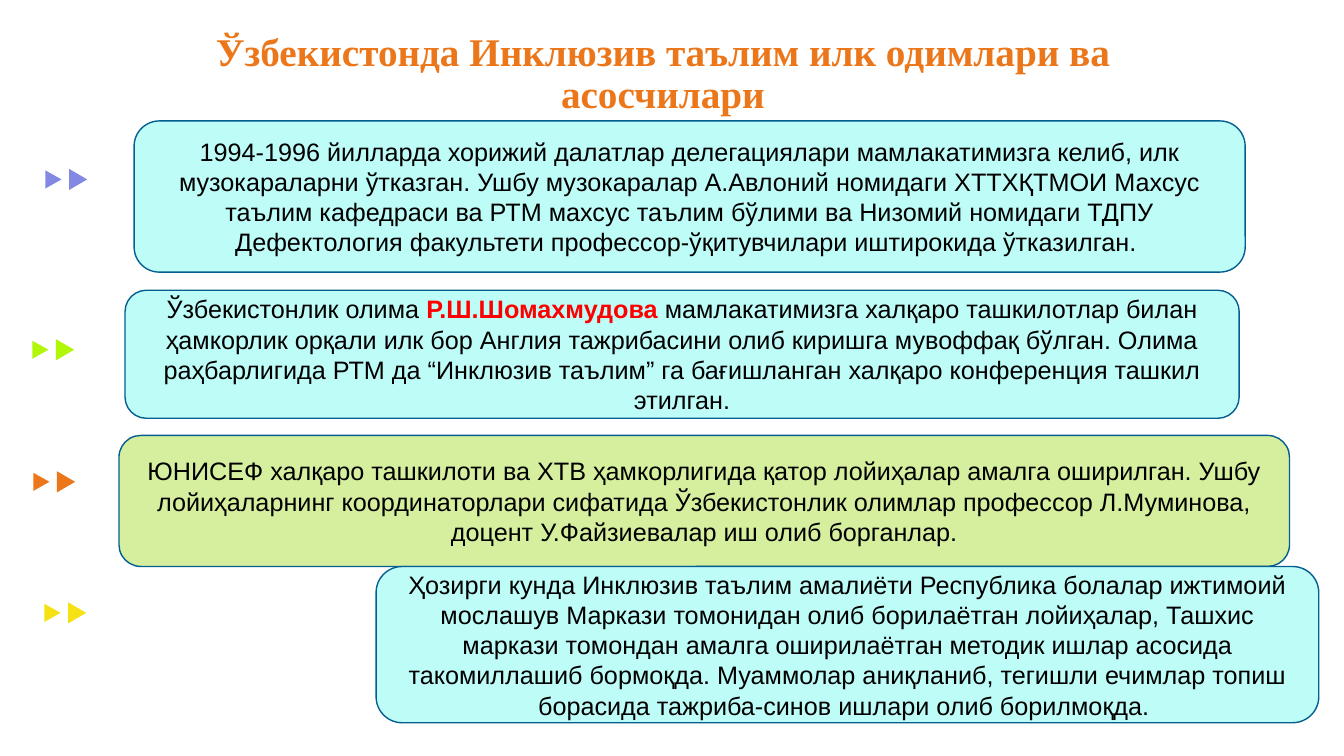
"""Builds a slide on the first steps of inclusive education in Uzbekistan."""
from pptx import Presentation
from pptx.dml.color import RGBColor
from pptx.enum.shapes import MSO_SHAPE
from pptx.enum.text import MSO_ANCHOR, PP_ALIGN
from pptx.util import Inches, Pt

ORANGE = RGBColor(0xEC, 0x77, 0x1B)
VIOLET = RGBColor(0x83, 0x88, 0xE3)
LIME = RGBColor(0xB2, 0xF6, 0x08)
YELLOW = RGBColor(0xF6, 0xE2, 0x13)
AQUA = RGBColor(0xBE, 0xFC, 0xF8)
PALE_GREEN = RGBColor(0xD6, 0xEF, 0x9E)
NAVY = RGBColor(0x04, 0x5F, 0x90)
BLACK = RGBColor(0x00, 0x00, 0x00)
RED = RGBColor(0xFF, 0x00, 0x00)


def add_filled(preset, box, color):
    shape = slide.shapes.add_shape(preset, *map(Inches, box))
    shape.shadow.inherit = False
    shape.fill.solid()
    shape.fill.fore_color.rgb = color
    return shape


def add_run(paragraph, text, face, size, color, bold):
    run = paragraph.add_run()
    run.text = text
    for name, value in {"name": face, "size": Pt(size), "bold": bold}.items():
        setattr(run.font, name, value)
    run.font.color.rgb = color


deck = Presentation()
deck.slide_width, deck.slide_height = Inches(13.33), Inches(7.5)
slide = deck.slides.add_slide(deck.slide_layouts[6])

heading = slide.shapes.add_textbox(Inches(1.59), Inches(0.3), Inches(9.97), Inches(0.88))
heading_format = {
    "word_wrap": True,
    "vertical_anchor": MSO_ANCHOR.MIDDLE,
    "margin_left": Inches(0.13),
    "margin_right": Inches(0.13),
    "margin_top": Inches(0.07),
    "margin_bottom": Inches(0.07),
}
for name, value in heading_format.items():
    setattr(heading.text_frame, name, value)
heading_line = heading.text_frame.paragraphs[0]
heading_line.alignment = PP_ALIGN.CENTER
heading_line.line_spacing = 0.9
add_run(heading_line, "Ўзбекистонда Инклюзив таълим илк одимлари ва асосчилари",
        "Times New Roman", 28, ORANGE, True)

markers = [(0.44, 1.7, VIOLET), (0.31, 3.39, LIME), (0.32, 4.7, ORANGE), (0.43, 6, YELLOW)]
for left, top, color in markers:
    for box in ((left, top, 0.18, 0.16), (left + 0.23, top - 0.01, 0.21, 0.18)):
        arrowhead = add_filled(MSO_SHAPE.ISOSCELES_TRIANGLE, box, color)
        arrowhead.rotation = 90
        arrowhead.line.fill.background()

milestones = [
    ((1.33, 1.2, 11.02, 1.5), AQUA, [
        ("1994-1996 йилларда хорижий далатлар делегациялари мамлакатимизга келиб, илк "
         "музокараларни ўтказган. Ушбу музокаралар А.Авлоний номидаги ХТТХҚТМОИ Махсус "
         "таълим кафедраси ва РТМ махсус таълим бўлими ва Низомий номидаги ТДПУ "
         "Дефектология факультети профессор-ўқитувчилари иштирокида ўтказилган. ", BLACK),
    ]),
    ((1.24, 2.88, 11.05, 1.27), AQUA, [
        ("Ўзбекистонлик олима ", BLACK),
        ("Р.Ш.Шомахмудова", RED),
        (" мамлакатимизга халқаро ташкилотлар билан ҳамкорлик орқали илк бор Англия "
         "тажрибасини олиб киришга мувоффақ бўлган. Олима раҳбарлигида РТМ да “Инклюзив "
         "таълим” га бағишланган халқаро конференция ташкил этилган.", BLACK),
    ]),
    ((1.18, 4.32, 11.61, 1.3), PALE_GREEN, [
        ("ЮНИСЕФ халқаро ташкилоти ва ХТВ ҳамкорлигида қатор лойиҳалар амалга оширилган. "
         "Ушбу лойиҳаларнинг координаторлари сифатида Ўзбекистонлик олимлар профессор "
         "Л.Муминова, доцент У.Файзиевалар иш олиб борганлар.", BLACK),
    ]),
    ((3.73, 5.62, 9.35, 1.55), AQUA, [
        ("Ҳозирги кунда Инклюзив таълим амалиёти Республика болалар ижтимоий мослашув "
         "Маркази томонидан олиб борилаётган лойиҳалар, Ташхис маркази томондан амалга "
         "оширилаётган методик ишлар асосида такомиллашиб бормоқда. Муаммолар аниқланиб, "
         "тегишли ечимлар топиш борасида тажриба-синов ишлари олиб борилмоқда. ", BLACK),
    ]),
]
for box, fill, passages in milestones:
    panel = add_filled(MSO_SHAPE.ROUNDED_RECTANGLE, box, fill)
    panel.line.color.rgb = NAVY
    panel.line.width = Pt(1)
    panel.text_frame.word_wrap = True
    panel.text_frame.vertical_anchor = MSO_ANCHOR.MIDDLE
    story = panel.text_frame.paragraphs[0]
    story.alignment = PP_ALIGN.CENTER
    for text, color in passages:
        add_run(story, text, "Arial", 18, color, color == RED)

deck.save("out.pptx")
